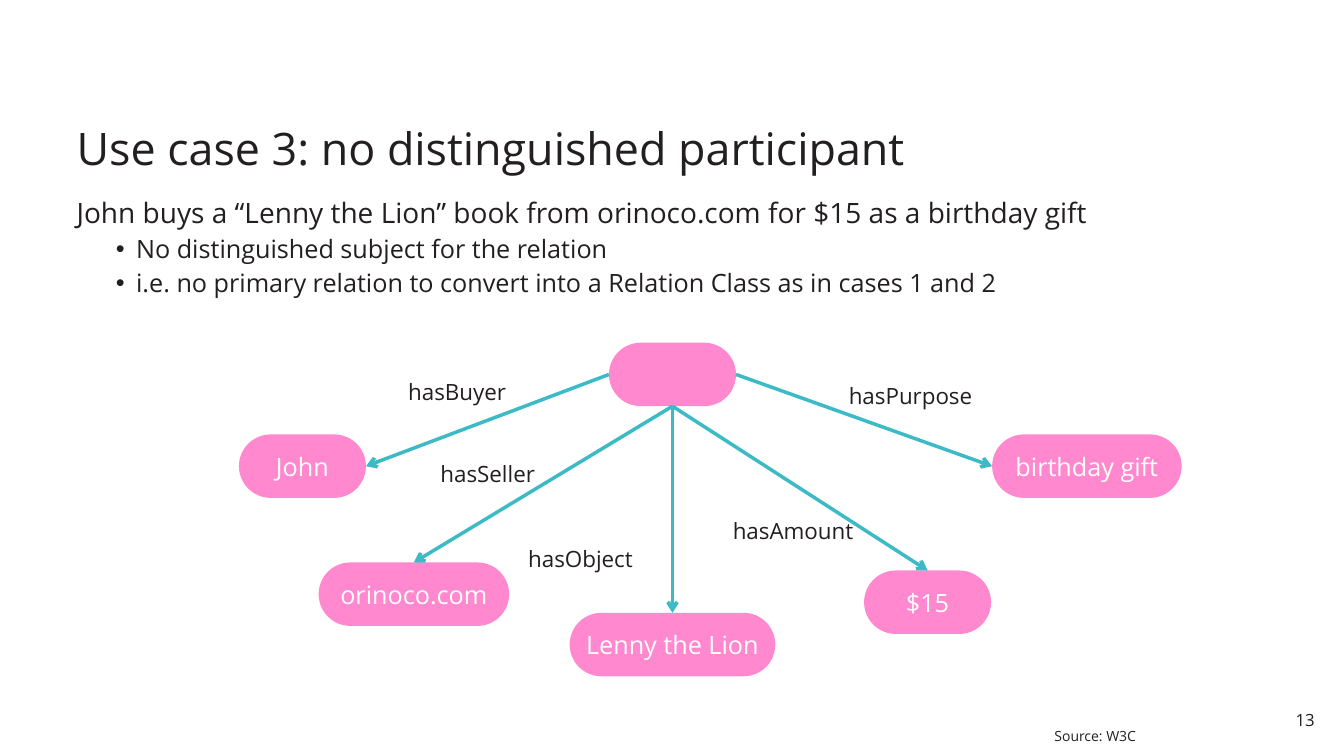
from pptx import Presentation
from pptx.dml.color import RGBColor
from pptx.enum.shapes import MSO_CONNECTOR, MSO_SHAPE
from pptx.enum.text import MSO_ANCHOR, MSO_AUTO_SIZE, PP_ALIGN
from pptx.oxml.ns import qn
from pptx.util import Inches, Pt
from lxml import etree

STRAIGHT = MSO_CONNECTOR.STRAIGHT
ROUNDED = MSO_SHAPE.ROUNDED_RECTANGLE
LEFT, CENTER, RIGHT = PP_ALIGN.LEFT, PP_ALIGN.CENTER, PP_ALIGN.RIGHT
TOP_SIDE, LEFT_SIDE, BOTTOM_SIDE, RIGHT_SIDE = range(4)

# Content
TITLE = "Use case 3: no distinguished participant"
LEAD = "John buys a “Lenny the Lion” book from orinoco.com for $15 as a birthday gift"
BULLETS = [
    "No distinguished subject for the relation",
    "i.e. no primary relation to convert into a Relation Class as in cases 1 and 2",
]
SOURCE = "Source: W3C"
PAGE_NUMBER = "13"

# Nodes: left, top, width
PURCHASE = (6.04, 3.4, 1.26)
# Relations: name, label box, value, node, side left, side reached
RELATIONS = [
    ("hasBuyer", (3.95, 3.7, 1.18), "John", (2.37, 4.31, 1.26), LEFT_SIDE, RIGHT_SIDE),
    ("hasSeller", (4.27, 4.52, 1.17), "orinoco.com", (3.16, 5.58, 1.89), BOTTOM_SIDE, TOP_SIDE),
    ("hasObject", (5.14, 5.36, 1.29), "Lenny the Lion", (5.65, 6.08, 2.04), BOTTOM_SIDE, TOP_SIDE),
    ("hasAmount", (7.17, 5.08, 1.44), "$15", (8.57, 5.66, 1.26), BOTTOM_SIDE, TOP_SIDE),
    ("hasPurpose", (8.32, 3.74, 1.45), "birthday gift", (9.84, 4.31, 1.88), RIGHT_SIDE, LEFT_SIDE),
]
NODE_HEIGHT = 0.63
LABEL_HEIGHT = 0.37

THEME = {
    "font": "Open Sans",
    "ink": RGBColor(0x23, 0x1F, 0x20),
    "node": RGBColor(0xFF, 0x88, 0xCF),
    "node_text": RGBColor(0xFF, 0xFF, 0xFF),
    "arrow": RGBColor(0x3C, 0xBA, 0xC6),
    "arrow_width": Pt(2.5),
    "title": Pt(32), "lead": Pt(20), "bullet": Pt(18),
    "label": Pt(16), "page": Pt(12), "source": Pt(10),
}


def style(paragraph, size, color="ink", alignment=LEFT):
    paragraph.alignment = alignment
    paragraph.font.name = THEME["font"]
    paragraph.font.size = THEME[size]
    paragraph.font.color.rgb = THEME[color]


def set_margins(frame, horizontal, vertical):
    frame.margin_left = frame.margin_right = Inches(horizontal)
    frame.margin_top = frame.margin_bottom = Inches(vertical)


def add_text(slide, box, text, size, alignment=LEFT, wrap=True):
    frame = slide.shapes.add_textbox(*map(Inches, box)).text_frame
    frame.word_wrap = wrap
    frame.text = text
    style(frame.paragraphs[0], size, alignment=alignment)
    return frame


def add_bullet(frame, text):
    paragraph = frame.add_paragraph()
    paragraph.text = text
    paragraph.level = 1
    paragraph.line_spacing = 0.9
    paragraph.space_before = Pt(5)
    properties = paragraph._p.get_or_add_pPr()
    properties.set("marL", str(Inches(0.59)))
    properties.set("indent", str(Inches(-0.2)))
    etree.SubElement(properties, qn("a:buFont"), typeface="Arial")
    etree.SubElement(properties, qn("a:buChar"), char="•")
    style(paragraph, "bullet")


def add_node(slide, place, text=""):
    shape = slide.shapes.add_shape(ROUNDED, *map(Inches, (*place, NODE_HEIGHT)))
    shape.adjustments[0] = 0.5
    shape.shadow.inherit = False
    shape.fill.solid()
    shape.fill.fore_color.rgb = THEME["node"]
    shape.line.fill.background()
    if text:
        frame = shape.text_frame
        frame.word_wrap = False
        frame.vertical_anchor = MSO_ANCHOR.MIDDLE
        frame.text = text
        style(frame.paragraphs[0], "bullet", "node_text", CENTER)
    return shape


def add_arrow(slide, start, start_side, end, end_side):
    connector = slide.shapes.add_connector(STRAIGHT, 0, 0, 0, 0)
    connector.begin_connect(start, start_side)
    connector.end_connect(end, end_side)
    connector.line.color.rgb = THEME["arrow"]
    connector.line.width = THEME["arrow_width"]
    etree.SubElement(connector.line._get_or_add_ln(), qn("a:tailEnd"), type="arrow")
    etree.SubElement(connector._element.spPr, qn("a:effectLst"))


def main():
    presentation = Presentation()
    presentation.slide_width = Inches(13.33)
    presentation.slide_height = Inches(7.5)
    slide = presentation.slides.add_slide(presentation.slide_layouts[5])

    # Title
    title = slide.shapes.title
    title.left, title.top, title.width, title.height = map(Inches, (0.68, 0.76, 11.97, 1.02))
    frame = title.text_frame
    frame.text = TITLE
    frame.word_wrap = True
    frame.auto_size = MSO_AUTO_SIZE.NONE
    frame.vertical_anchor = MSO_ANCHOR.BOTTOM
    set_margins(frame, 0.08, 0.04)
    frame.paragraphs[0].line_spacing = 0.9
    style(frame.paragraphs[0], "title")

    # Statement and bullets
    frame = add_text(slide, (0.68, 1.94, 11.97, 1.18), LEAD, "lead")
    set_margins(frame, 0.08, 0.04)
    frame.paragraphs[0].line_spacing = 0.9
    for bullet in BULLETS:
        add_bullet(frame, bullet)

    # Relation diagram
    purchase = add_node(slide, PURCHASE)
    for name, label_place, value, node_place, start_side, end_side in RELATIONS:
        node = add_node(slide, node_place, value)
        add_arrow(slide, purchase, start_side, node, end_side)
        add_text(slide, (*label_place, LABEL_HEIGHT), name, "label", wrap=False)

    # Source and page number
    add_text(slide, (10.36, 7.17, 1.3, 0.27), SOURCE, "source")
    frame = add_text(slide, (12.65, 6.98, 0.47, 0.31), PAGE_NUMBER, "page", RIGHT)
    set_margins(frame, 0.08, 0.06)

    presentation.save("out.pptx")


if __name__ == "__main__":
    main()
